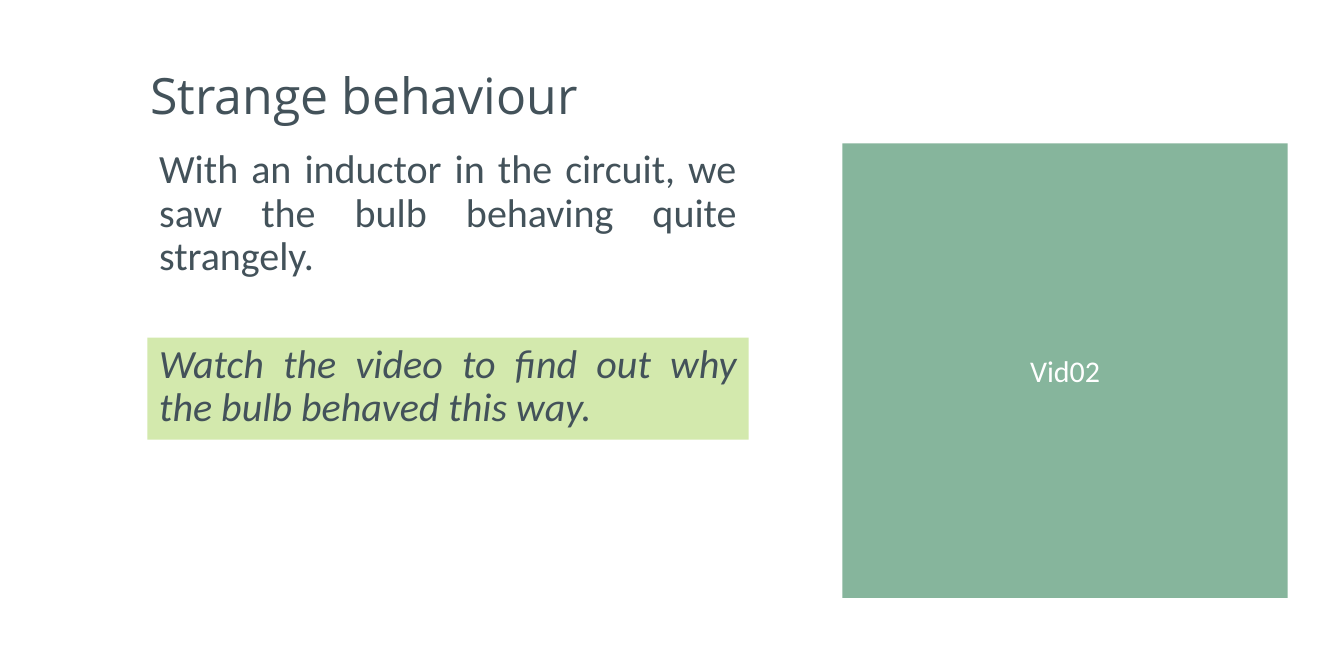
from dataclasses import dataclass
from typing import Optional

from pptx import Presentation
from pptx.dml.color import RGBColor
from pptx.enum.shapes import MSO_SHAPE
from pptx.enum.text import MSO_ANCHOR, PP_ALIGN
from pptx.util import Pt

INK = "43525A"
LEFT, TOP, COLUMN_WIDTH = 88.4, 86, 360.8
READING = {"alignment": PP_ALIGN.JUSTIFY, "line_spacing": 0.9, "space_before": Pt(7.3)}


@dataclass
class TextBlock:
    text: str
    left: float
    top: float
    width: float
    height: float
    font: dict
    para: dict
    color: str = INK
    fill: Optional[str] = None
    anchor: MSO_ANCHOR = MSO_ANCHOR.TOP
    side_margin: float = 7.2


def rgb(value: str) -> RGBColor:
    return RGBColor.from_string(value)


def apply_format(target, values: dict) -> None:
    for name, value in values.items():
        setattr(target, name, value)


def draw_block(page, block: TextBlock) -> None:
    place = [Pt(v) for v in (block.left, block.top, block.width, block.height)]
    # Filled panels are rectangles, the rest are text boxes
    if block.fill:
        box = page.shapes.add_shape(MSO_SHAPE.RECTANGLE, *place)
        box.shadow.inherit = False
        box.fill.solid()
        box.fill.fore_color.rgb = rgb(block.fill)
        box.line.fill.background()
    else:
        box = page.shapes.add_textbox(*place)
    apply_format(box.text_frame, {
        "word_wrap": True,
        "vertical_anchor": block.anchor,
        "margin_left": Pt(block.side_margin),
        "margin_right": Pt(block.side_margin),
    })
    # Text
    para = box.text_frame.paragraphs[0]
    apply_format(para, block.para)
    span = para.add_run()
    span.text = block.text
    apply_format(span.font, block.font)
    span.font.color.rgb = rgb(block.color)


BLOCKS = [
    # Title
    TextBlock("Strange behaviour", 83.8, 20.9, 604, 76.3,
              {"name": "Open Sans", "size": Pt(30)},
              {"alignment": PP_ALIGN.LEFT, "line_spacing": 0.9},
              anchor=MSO_ANCHOR.MIDDLE, side_margin=6.5),
    # Observation
    TextBlock("With an inductor in the circuit, we saw the bulb behaving quite strangely.",
              LEFT, TOP, COLUMN_WIDTH, 86.4,
              {"name": "Calibri", "size": Pt(24)}, READING),
    # Invitation to watch
    TextBlock("Watch the video to find out why the bulb behaved this way.",
              LEFT, 202.4, COLUMN_WIDTH, 61.2,
              {"name": "Calibri", "size": Pt(24), "italic": True}, READING,
              fill="D3E9AD"),
    # Video area
    TextBlock("Vid02", 505.4, TOP, 267.1, 272.5,
              {"name": "Calibri", "size": Pt(18)}, {"alignment": PP_ALIGN.CENTER},
              color="FFFFFF", fill="86B59C", anchor=MSO_ANCHOR.MIDDLE),
]


def main() -> None:
    deck = Presentation()
    deck.slide_width = Pt(806.25)
    deck.slide_height = Pt(394)
    page = deck.slides.add_slide(deck.slide_layouts[6])
    for block in BLOCKS:
        draw_block(page, block)
    deck.save("out.pptx")


if __name__ == "__main__":
    main()
